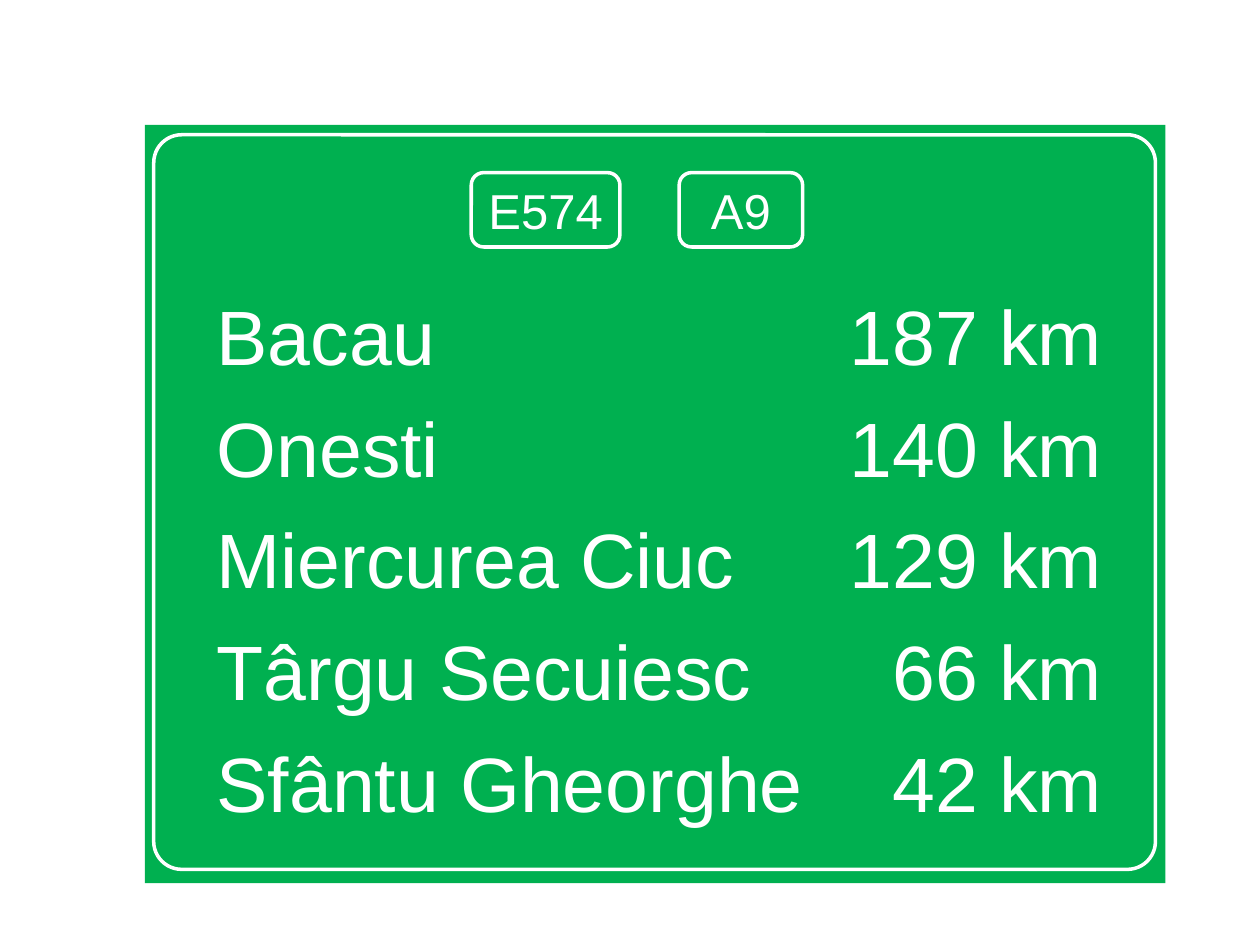
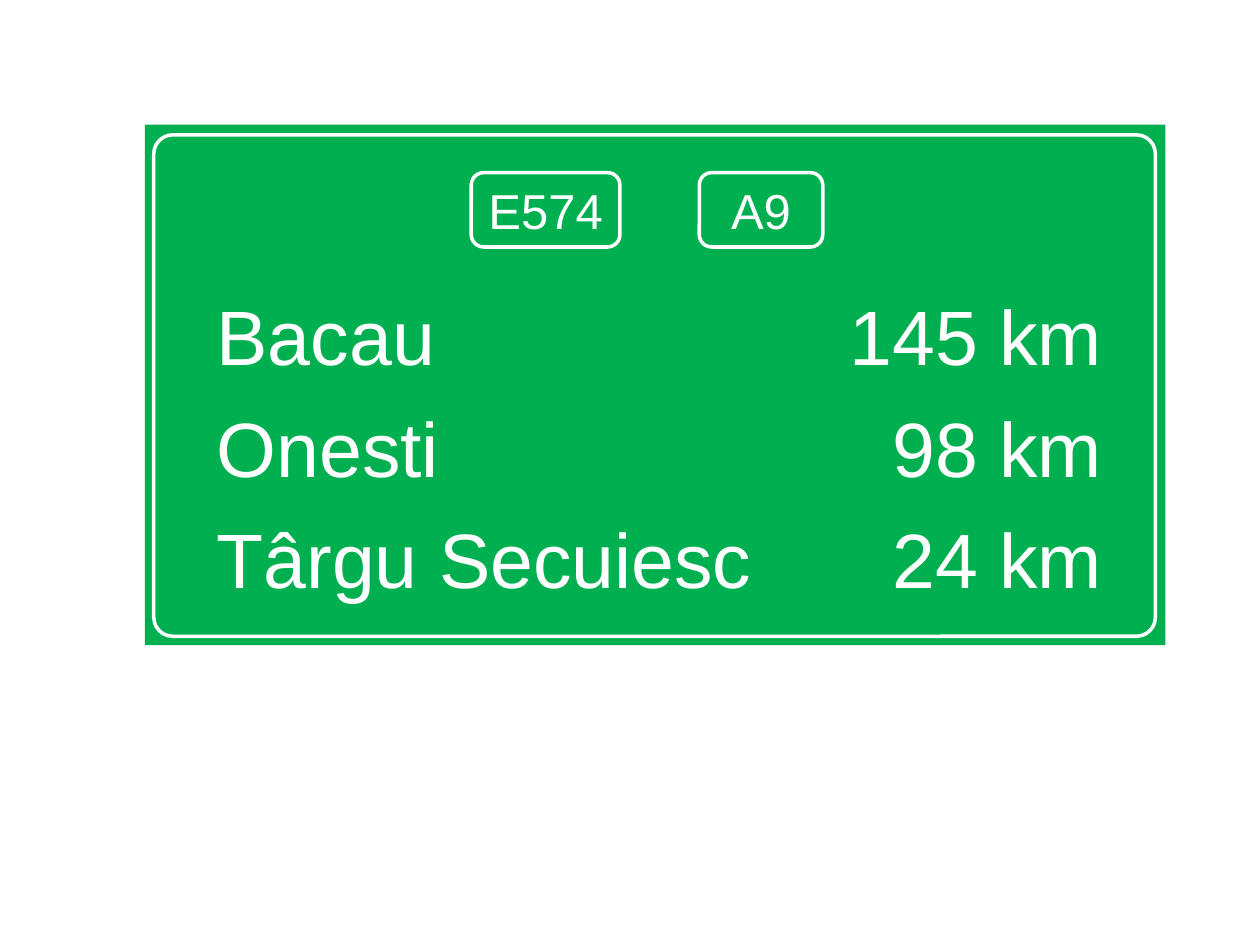
from dataclasses import dataclass

from lxml.etree import SubElement
from pptx import Presentation
from pptx.dml.color import RGBColor
from pptx.enum.shapes import MSO_SHAPE
from pptx.enum.text import MSO_ANCHOR, PP_ALIGN
from pptx.oxml.ns import qn
from pptx.shapes.autoshape import Shape
from pptx.slide import Slide
from pptx.util import Inches, Pt


@dataclass(frozen=True)
class Theme:
    green: RGBColor = RGBColor(0x00, 0xB0, 0x50)
    white: RGBColor = RGBColor(0xFF, 0xFF, 0xFF)
    font: str = "Arial"
    town: int = 44
    road: int = 28
    gap: int = 11
    line: int = 2
    curve: float = 0.038


@dataclass(frozen=True)
class Box:
    """Place on the grid, in columns and rows."""
    left: float
    top: float
    width: float
    height: float


@dataclass(frozen=True)
class Badge:
    name: str
    left: float
    width: float


@dataclass(frozen=True)
class Stop:
    town: str
    far: str


@dataclass(frozen=True)
class Sign:
    height: float
    inner: float
    badges: tuple[Badge, ...]
    stops: tuple[Stop, ...]


THEME = Theme()
WIDE, HIGH = Inches(10), Inches(7.5)
COLS, ROWS = 100, 75

# Rules shared by every sign, in grid units
PANEL = Box(11.5, 9.9, 81, 0)
FRAME = Box(12.2, 10.7, 79.5, 0)
BADGE_TOP, BADGE_HIGH = 13.7, 5.9
TEXT_LEFT, TEXT_TOP, TEXT_RIGHT, TEXT_BASE = 5.7, 13, 0.8, 2
TAB = 70.3

EURO = Badge("E574", 37.4, 11.8)

SIGNS = (
    Sign(60.2, 58.3, (EURO, Badge("A9", 53.9, 9.8)), (
        Stop("Bacau", "187 km"),
        Stop("Onesti", "140 km"),
        Stop("Miercurea Ciuc", "129 km"),
        Stop("Târgu Secuiesc", "66 km"),
        Stop("Sfântu Gheorghe", "42 km"),
    )),
    Sign(41.3, 39.8, (EURO, Badge("A9", 55.5, 9.8)), (
        Stop("Bacau", "145 km"),
        Stop("Onesti", "98 km"),
        Stop("Târgu Secuiesc", "24 km"),
    )),
)


def col(count: float) -> int:
    return round(WIDE * count / COLS)


def row(count: float) -> int:
    return round(HIGH * count / ROWS)


def add_box(slide: Slide, kind: MSO_SHAPE, box: Box,
            fill: bool = True, edge: bool = True) -> Shape:
    shape = slide.shapes.add_shape(kind, col(box.left), row(box.top),
                                   col(box.width), row(box.height))
    shape.shadow.inherit = False
    if fill:
        shape.fill.solid()
        shape.fill.fore_color.rgb = THEME.green
    else:
        shape.fill.background()
    if edge:
        shape.line.color.rgb = THEME.white
        shape.line.width = Pt(THEME.line)
    else:
        shape.line.fill.background()
    return shape


def add_run(para, text: str, size: int) -> None:
    run = para.add_run()
    run.text = text
    run.font.name = THEME.font
    run.font.size = Pt(size)
    run.font.color.rgb = THEME.white


def add_tab(para, place: int) -> None:
    tabs = SubElement(para._p.get_or_add_pPr(), qn("a:tabLst"))
    SubElement(tabs, qn("a:tab"), pos=str(place), algn="r")


def draw_panel(slide: Slide, sign: Sign) -> None:
    box = Box(PANEL.left, PANEL.top, PANEL.width, sign.height)
    frame = add_box(slide, MSO_SHAPE.RECTANGLE, box, edge=False).text_frame
    frame.word_wrap = True
    frame.vertical_anchor = MSO_ANCHOR.TOP
    frame.margin_left, frame.margin_right = col(TEXT_LEFT), col(TEXT_RIGHT)
    frame.margin_top, frame.margin_bottom = row(TEXT_TOP), row(TEXT_BASE)
    # One line per town, distances flush right at the tab
    for i, stop in enumerate(sign.stops):
        para = frame.add_paragraph() if i else frame.paragraphs[0]
        para.alignment = PP_ALIGN.LEFT
        if i:
            para.space_before = Pt(THEME.gap)
        add_tab(para, col(TAB))
        add_run(para, stop.town, THEME.town)
        add_run(para, "\t" + stop.far, THEME.town)


def draw_frame(slide: Slide, sign: Sign) -> None:
    box = Box(FRAME.left, FRAME.top, FRAME.width, sign.inner)
    shape = add_box(slide, MSO_SHAPE.ROUNDED_RECTANGLE, box, fill=False)
    shape.adjustments[0] = THEME.curve


def draw_badge(slide: Slide, badge: Badge) -> None:
    box = Box(badge.left, BADGE_TOP, badge.width, BADGE_HIGH)
    frame = add_box(slide, MSO_SHAPE.ROUNDED_RECTANGLE, box).text_frame
    frame.margin_left = frame.margin_right = 0
    frame.vertical_anchor = MSO_ANCHOR.MIDDLE
    para = frame.paragraphs[0]
    para.alignment = PP_ALIGN.CENTER
    add_run(para, badge.name, THEME.road)


def main() -> None:
    deck = Presentation()
    deck.slide_width, deck.slide_height = WIDE, HIGH
    for sign in SIGNS:
        slide = deck.slides.add_slide(deck.slide_layouts[6])
        draw_panel(slide, sign)
        draw_frame(slide, sign)
        for badge in sign.badges:
            draw_badge(slide, badge)
    deck.save("out.pptx")


if __name__ == "__main__":
    main()
